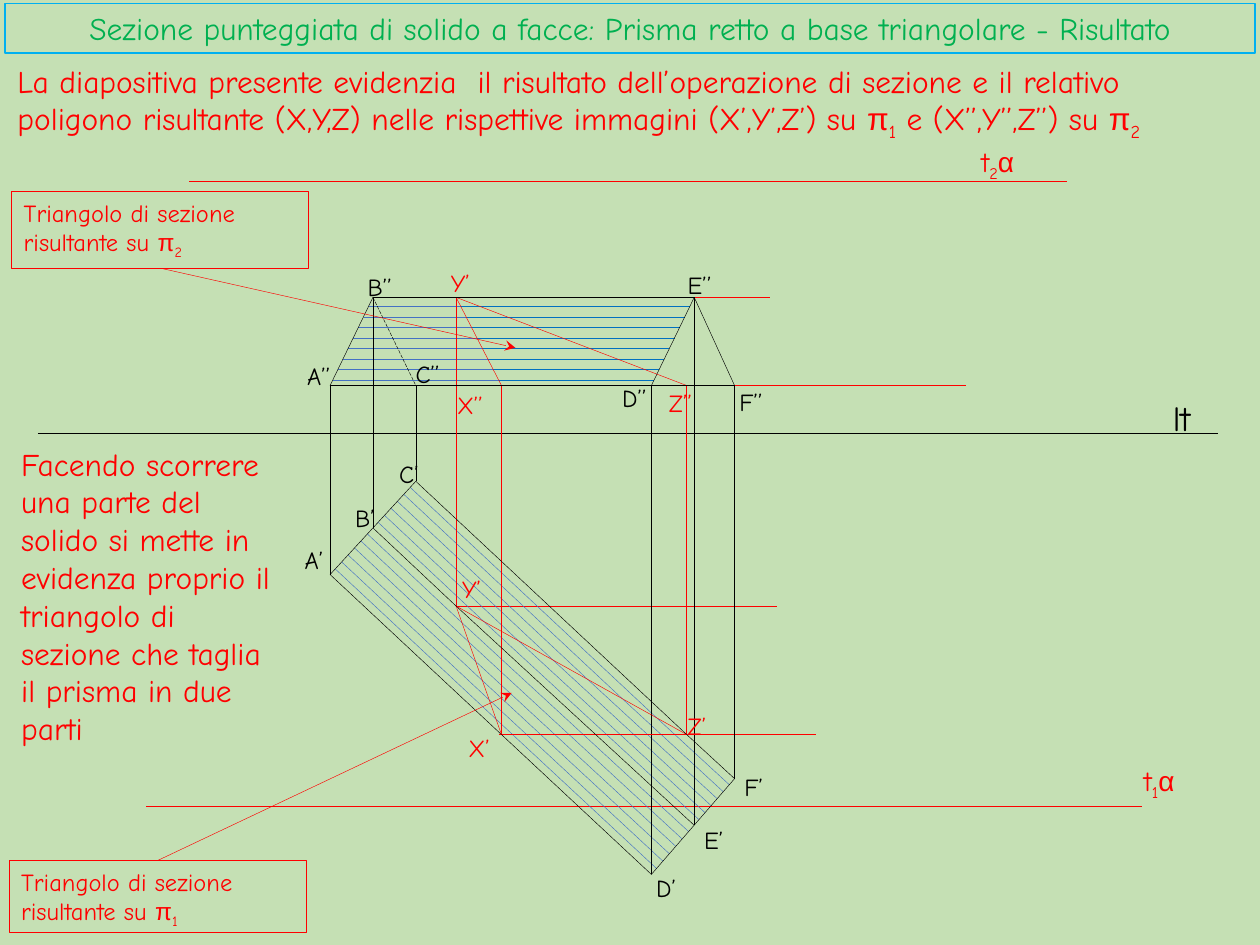
from lxml.etree import SubElement
from pptx import Presentation
from pptx.dml.color import RGBColor
from pptx.enum.dml import MSO_LINE_DASH_STYLE as Dash
from pptx.enum.shapes import MSO_CONNECTOR as Connector, MSO_SHAPE as Shape
from pptx.enum.text import MSO_ANCHOR as Anchor, MSO_AUTO_SIZE as AutoSize, PP_ALIGN as Align
from pptx.oxml.ns import qn
from pptx.util import Cm, Pt

INCH = 2.54  # drawing units are inches, converted to centimetres
BLACK, RED, BLUE, BRIGHT_BLUE = "000000", "FF0000", "4472C4", "0070C0"
color = RGBColor.from_string

presentation = Presentation()
presentation.slide_width, presentation.slide_height = Cm(10 * INCH), Cm(7.5 * INCH)
slide = presentation.slides.add_slide(presentation.slide_layouts[6])
slide.background.fill.solid()
slide.background.fill.fore_color.rgb = color("C5E0B4")


def add_line(start, end, line_color, dash=None, arrow=False):
    ends = [Cm(value * INCH) for value in (*start, *end)]
    connector = slide.shapes.add_connector(Connector.STRAIGHT, *ends)
    connector.line.color.rgb = color(line_color)
    connector.line.width = Pt(0.25)
    if dash:
        connector.line.dash_style = dash
    if arrow:
        SubElement(connector.line._get_or_add_ln(), qn("a:tailEnd"), type="stealth")
    SubElement(connector._element.spPr, qn("a:effectLst"))


def add_text(box, text, size, text_color, border=None, border_width=0.25, anchor=Anchor.TOP,
             align=Align.LEFT, fit=AutoSize.SHAPE_TO_FIT_TEXT):
    """Bars split the text into runs: Greek letters go in Arial, lone digits are subscripts."""
    place = [Cm(value * INCH) for value in box]
    if border:
        shape = slide.shapes.add_shape(Shape.RECTANGLE, *place)
        shape.shadow.inherit = False
        shape.fill.background()
        shape.line.color.rgb = color(border)
        shape.line.width = Pt(border_width)
    else:
        shape = slide.shapes.add_textbox(*place)
    frame = shape.text_frame
    for name, value in {"word_wrap": True, "auto_size": fit, "vertical_anchor": anchor}.items():
        setattr(frame, name, value)
    paragraph = frame.paragraphs[0]
    paragraph.alignment = align
    for piece in text.split("|"):
        run = paragraph.add_run()
        run.text = piece
        font_name = "Arial" if piece in ("π", "α") else "Comic Neue"
        for name, value in {"name": font_name, "size": Pt(size)}.items():
            setattr(run.font, name, value)
        run.font.color.rgb = color(text_color)
        if piece.isdigit():
            run._r.get_or_add_rPr().set("baseline", "-25000")


# Prism ABC-DEF cut by triangle XYZ: both views share the horizontal positions
columns = dict(A=2.62, B=2.96, C=3.3, X=3.98, Y=3.62, Z=5.45, D=5.17, E=5.51, F=5.83)
plan_rows = dict(A=4.56, B=4.19, C=3.82, X=5.83, Y=4.81, Z=5.83, D=6.94, E=6.55, F=6.18)
front = {name: (x, 2.36 if name in "BYE" else 3.06) for name, x in columns.items()}
plan = {name: (x, plan_rows[name]) for name, x in columns.items()}

# Ground line, traces of the plane and its horizontals
add_line((0.3, 3.44), (9.67, 3.44), BLACK)
for left, right, y in [(1.16, 9.06, 6.4), (1.5, 8.47, 1.44), (3.63, 6.11, 2.36),
                       (3.97, 7.67, 3.06), (3.62, 6.17, 4.81), (3.96, 6.48, 5.83)]:
    add_line((left, y), (right, y), RED)

# Hatching: each band runs from the base, across the section, to the far base
front_steps = [0.1 + 0.12 * step for step in range(8)]
plan_steps = [0.13 + 0.15 * step for step in range(6)]
for view, edges, steps, far_color in [(front, ("BA", "YX", "ED"), front_steps, BRIGHT_BLUE),
                                      (plan, ("CB", "ZY", "FE"), plan_steps, BLUE),
                                      (plan, ("BA", "YX", "ED"), plan_steps, BLUE)]:
    for step in steps:
        base, cut, far = [
            [a + (b - a) * step for a, b in zip(view[first], view[last])] for first, last in edges]
        add_line(base, cut, BLUE)
        add_line(cut, far, far_color)

# Projection lines, section triangle and edges of the solid
for name in columns:
    add_line(front[name], plan[name], RED if name in "XYZ" else BLACK)
for view, edges in [(front, "AX BY AB EF ED YE XD DF"), (plan, "AX BY CZ CA XD YE ZF FD")]:
    for first, last in ("XZ", "XY", "YZ"):
        add_line(view[first], view[last], RED)
    for first, last in edges.split():
        add_line(view[first], view[last], BLACK)
add_line(front["B"], front["C"], BLACK, dash=Dash.LONG_DASH)

# Point labels
for text, left, top in [
        ("A’", 2.32, 4.28), ("A’’", 2.34, 2.82), ("B’", 2.72, 3.94), ("B’’", 2.82, 2.11),
        ("C’", 3.07, 3.59), ("C’’", 3.2, 2.8), ("X’", 3.62, 5.77), ("X’’", 3.53, 3.05),
        ("Y’", 3.57, 4.51), ("Y’", 3.48, 2.08), ("Z’", 5.36, 5.59), ("Z’’", 5.21, 3.03),
        ("D’", 5.11, 6.88), ("D’’", 4.84, 2.99), ("E’", 5.49, 6.5), ("E’’", 5.36, 2.09),
        ("F’", 5.81, 6.08), ("F’’", 5.77, 3.02)]:
    add_text((left, top, 0.43, 0.34), text, 14, RED if text[0] in "XYZ" else BLACK)
add_text((7.69, 1.1, 0.55, 0.37), "t|2|α", 16, RED)
add_text((8.98, 6.01, 0.55, 0.37), "t|1|α", 16, RED)
add_text((9.21, 3.1, 0.51, 0.44), "lt", 20, BLACK)

# Title and explanations
add_text((0.04, 0.03, 9.92, 0.39),
         "Sezione punteggiata di solido a facce: Prisma retto a base triangolare - Risultato",
         18, "00B050", border="00B0F0", border_width=0.75, anchor=Anchor.BOTTOM,
         align=Align.CENTER, fit=AutoSize.NONE)
add_text((0.04, 0.44, 9.92, 0.71),
         "La diapositiva presente evidenzia  il risultato dell’operazione di sezione e il relativo "
         "poligono risultante (X,Y,Z) nelle rispettive immagini (X’,Y’,Z’) su |π|1| e "
         "(X’’,Y’’,Z’’) su |π|2", 18, RED)
add_text((0.07, 3.48, 2.24, 2.8),
         "Facendo scorrere una parte del solido si mette in evidenza proprio il triangolo di "
         "sezione che taglia il prisma in due parti", 18, RED)

# Callouts with arrows to the section
for left, top, height, plane, start, tip in [
        (0.07, 6.83, 0.57, 1, (1.25, 6.83), (4.06, 5.5)),
        (0.09, 1.52, 0.61, 2, (1.28, 2.13), (4.09, 2.76))]:
    add_text((left, top, 2.36, height), f"Triangolo di sezione risultante su |π|{plane}",
             14, RED, border=RED)
    add_line(start, tip, RED, arrow=True)

presentation.save("out.pptx")
